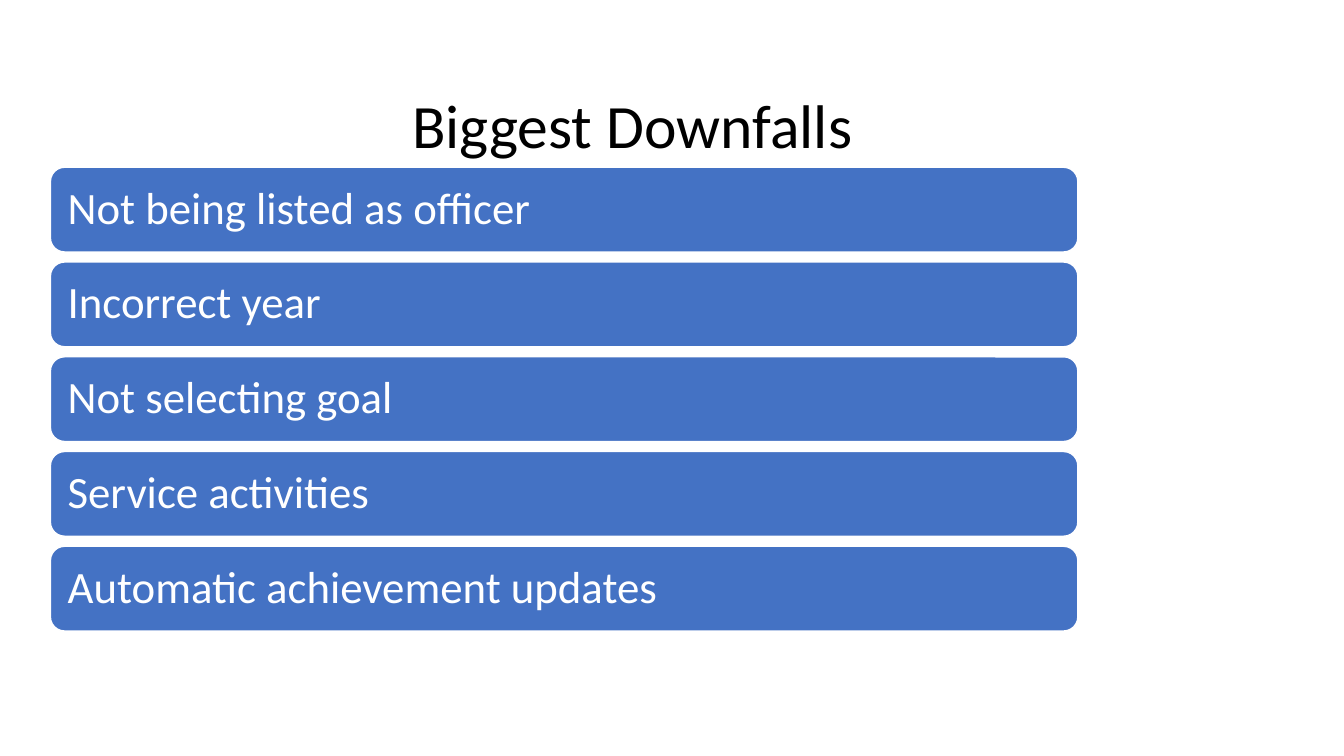
"""Build the Biggest Downfalls slide: a title above five rounded bars."""
from dataclasses import dataclass

from pptx import Presentation
from pptx import util as u
from pptx.dml.color import RGBColor
from pptx.enum import shapes, text

BLUE = RGBColor(0x44, 0x72, 0xC4)
WHITE = RGBColor(0xFF, 0xFF, 0xFF)
BLACK = RGBColor(0x00, 0x00, 0x00)

GRID_LEFT, GRID_TOP = 0.5, 1.66
COLUMN_WIDTH, ROW_PITCH, ROW_HEIGHT = 10.19, 0.94, 0.84
MARGINS = ("margin_left", "margin_top", "margin_right", "margin_bottom")


@dataclass(frozen=True)
class Bar:
    row: int
    label: str


LABELS = (
    "Not being listed as officer",
    "Incorrect year",
    "Not selecting goal",
    "Service activities",
    "Automatic achievement updates",
)
BARS = [Bar(row, label) for row, label in enumerate(LABELS)]


def set_attrs(target: object, values: dict) -> None:
    for name, value in values.items():
        setattr(target, name, value)


def write(sp, label: str, size: int, color: RGBColor, frame: dict) -> None:
    tf = sp.text_frame
    set_attrs(tf, {"word_wrap": True,
                   "vertical_anchor": text.MSO_ANCHOR.MIDDLE, **frame})
    p = tf.paragraphs[0]
    set_attrs(p, {"alignment": text.PP_ALIGN.LEFT, "line_spacing": 0.9})
    r = p.add_run()
    r.text = label
    set_attrs(r.font, {"name": "Calibri", "size": u.Pt(size)})
    r.font.color.rgb = color


def add_title(s, label: str) -> None:
    sp = s.shapes.add_textbox(*map(u.Inches, (3.99, 0.55, 5.08, 1.45)))
    write(sp, label, 44, BLACK, {})


def add_bar(s, bar: Bar) -> None:
    top = GRID_TOP + bar.row * ROW_PITCH
    sp = s.shapes.add_shape(
        shapes.MSO_SHAPE.ROUNDED_RECTANGLE,
        *map(u.Inches, (GRID_LEFT, top, COLUMN_WIDTH, ROW_HEIGHT)))
    sp.shadow.inherit = False
    sp.fill.solid()
    sp.fill.fore_color.rgb = BLUE
    sp.line.color.rgb = WHITE
    sp.line.width = u.Pt(1)
    write(sp, bar.label, 32, WHITE, dict.fromkeys(MARGINS, u.Inches(0.13)))


def main() -> None:
    prs = Presentation()
    set_attrs(prs, {"slide_width": u.Inches(13.33),
                    "slide_height": u.Inches(7.5)})
    s = prs.slides.add_slide(prs.slide_layouts[6])
    add_title(s, "Biggest Downfalls")
    for bar in BARS:
        add_bar(s, bar)
    prs.save("out.pptx")


if __name__ == "__main__":
    main()
